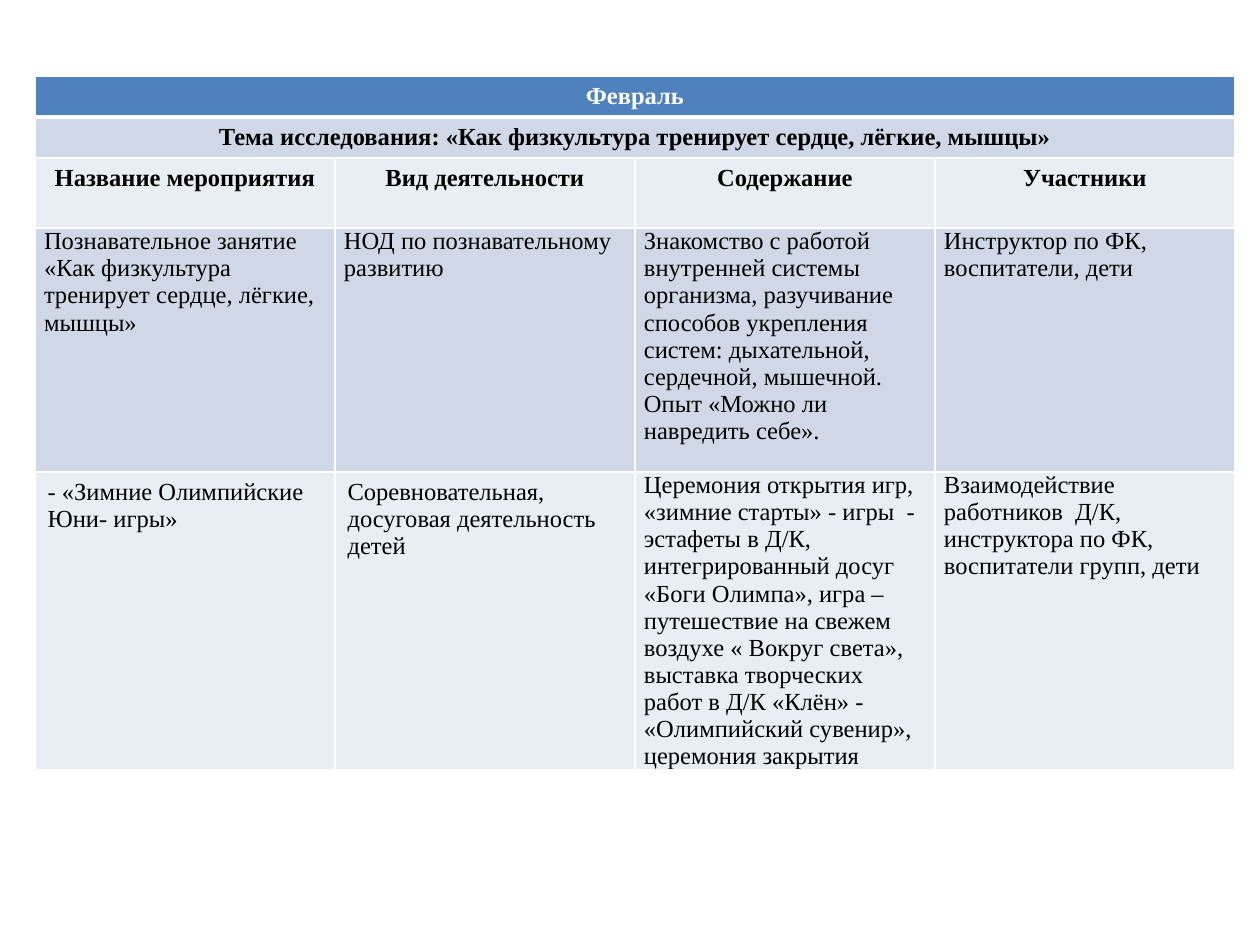
from dataclasses import dataclass
from typing import NamedTuple

from lxml.etree import SubElement
from pptx import Presentation
from pptx.dml.color import RGBColor as Color
from pptx.enum.text import PP_ALIGN as Align
from pptx.oxml.ns import qn
from pptx.util import Emu, Pt

EMU_PER_PX = 914400 / 126


def px(length: int) -> Emu:
    return Emu(round(length * EMU_PER_PX))


@dataclass(frozen=True)
class Theme:
    font: str = "Times New Roman"
    size: int = 14
    white: str = "FFFFFF"
    black: str = "000000"
    blue: str = "4F81BD"
    dark_band: str = "D0D8E8"
    light_band: str = "E9EDF4"
    thin: int = 1
    thick: int = 3


THEME = Theme()


class Entry(NamedTuple):
    text: str
    tight: bool = False


@dataclass(frozen=True)
class Row:
    height: int
    fill: str
    entries: tuple[Entry, ...]
    heading: bool = False
    color: str = THEME.black
    top: int = THEME.thin
    bottom: int = THEME.thin


LEFT, TOP, COLUMN_WIDTH, COLUMN_COUNT = 35, 76, 300, 4
TIGHT_MARGINS = {
    "margin_left": px(9),
    "margin_right": px(9),
    "margin_top": px(0),
    "margin_bottom": px(0),
}

ROWS = (
    Row(41, THEME.blue, (Entry("Февраль"),), heading=True,
        color=THEME.white, bottom=THEME.thick),
    Row(41, THEME.dark_band,
        (Entry("Тема исследования: «Как физкультура тренирует сердце, лёгкие, мышцы»"),),
        heading=True, top=THEME.thick),
    Row(70, THEME.light_band, (
        Entry("Название мероприятия"),
        Entry("Вид деятельности"),
        Entry("Содержание"),
        Entry("Участники"),
    ), heading=True),
    Row(244, THEME.dark_band, (
        Entry("Познавательное занятие «Как физкультура тренирует сердце, "
              "лёгкие, мышцы»", tight=True),
        Entry("НОД по познавательному развитию", tight=True),
        Entry("Знакомство с работой внутренней системы организма, разучивание "
              "способов укрепления систем: дыхательной, сердечной, мышечной. "
              "Опыт «Можно ли навредить себе».", tight=True),
        Entry("Инструктор по ФК, воспитатели, дети", tight=True),
    )),
    Row(297, THEME.light_band, (
        Entry("- «Зимние Олимпийские Юни- игры»"),
        Entry("Соревновательная, досуговая деятельность детей"),
        Entry("Церемония открытия игр, «зимние старты» - игры  - эстафеты в Д/К, "
              "интегрированный досуг «Боги Олимпа», игра – путешествие на свежем "
              "воздухе « Вокруг света», выставка творческих работ в Д/К «Клён» - "
              "«Олимпийский сувенир», церемония закрытия", tight=True),
        Entry("Взаимодействие работников  Д/К, инструктора по ФК, воспитатели "
              "групп, дети", tight=True),
    )),
)


def set_all(target, values: dict) -> None:
    for name, value in values.items():
        setattr(target, name, value)


def draw_borders(cell, row: Row) -> None:
    """Add the cell's edge lines; they must precede its fill in the XML."""
    properties = cell._tc.get_or_add_tcPr()
    widths = {"L": THEME.thin, "R": THEME.thin, "T": row.top, "B": row.bottom}
    for side, width in widths.items():
        line = SubElement(properties, qn(f"a:ln{side}"), w=str(Pt(width)))
        fill = SubElement(line, qn("a:solidFill"))
        SubElement(fill, qn("a:srgbClr"), val=THEME.white)


def style_cell(cell, row: Row) -> None:
    draw_borders(cell, row)
    cell.fill.solid()
    cell.fill.fore_color.rgb = Color.from_string(row.fill)


def write_entry(cell, entry: Entry, row: Row) -> None:
    if entry.tight:
        set_all(cell, TIGHT_MARGINS)
    para = cell.text_frame.paragraphs[0]
    para.alignment = Align.CENTER if row.heading else Align.LEFT
    span = para.add_run()
    span.text = entry.text
    set_all(span.font, {"name": THEME.font, "size": Pt(THEME.size), "bold": row.heading})
    span.font.color.rgb = Color.from_string(row.color)


def draw_plan(page) -> None:
    height = sum(row.height for row in ROWS)
    table = page.shapes.add_table(
        len(ROWS), COLUMN_COUNT, px(LEFT), px(TOP),
        px(COLUMN_WIDTH * COLUMN_COUNT), px(height),
    ).table
    for column in table.columns:
        column.width = px(COLUMN_WIDTH)
    for index, row in enumerate(ROWS):
        table.rows[index].height = px(row.height)
        cells = [table.cell(index, column) for column in range(COLUMN_COUNT)]
        for cell in cells:
            style_cell(cell, row)
        if len(row.entries) == 1:
            cells[0].merge(cells[-1])
        for cell, entry in zip(cells, row.entries):
            write_entry(cell, entry, row)


def main() -> None:
    deck = Presentation()
    set_all(deck, {"slide_width": px(1260), "slide_height": px(945)})
    page = deck.slides.add_slide(deck.slide_layouts[6])
    draw_plan(page)
    deck.save("out.pptx")


if __name__ == "__main__":
    main()
